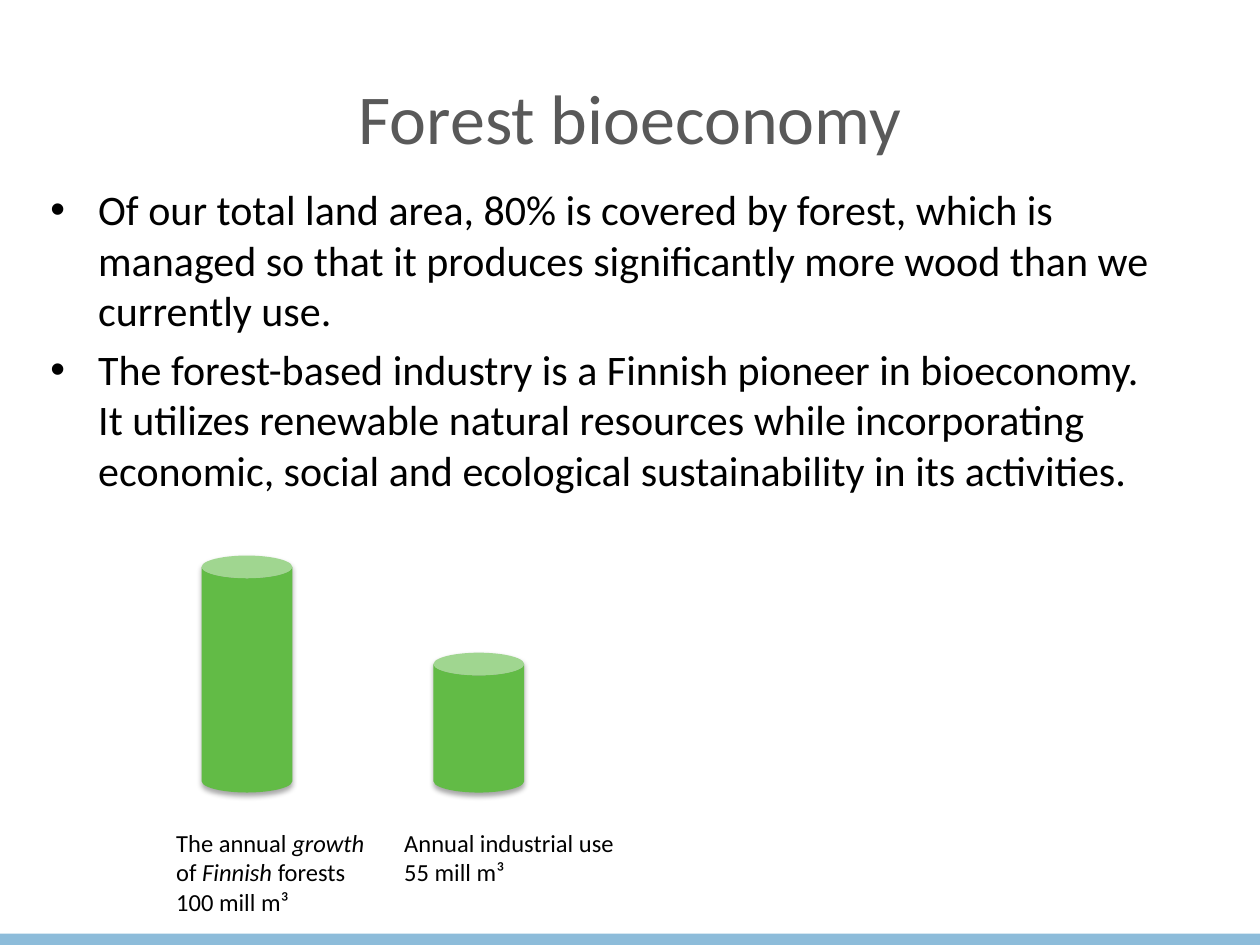
from lxml import etree
from pptx import Presentation
from pptx.dml.color import RGBColor
from pptx.enum.shapes import MSO_SHAPE
from pptx.enum.text import MSO_ANCHOR, PP_ALIGN
from pptx.oxml import parse_xml
from pptx.oxml.ns import nsdecls, qn
from pptx.util import Inches, Pt

RECTANGLE, CAN = MSO_SHAPE.RECTANGLE, MSO_SHAPE.CAN
TOP, MIDDLE = MSO_ANCHOR.TOP, MSO_ANCHOR.MIDDLE
LEFT, CENTER = PP_ALIGN.LEFT, PP_ALIGN.CENTER

THEME = {
    "font": "Calibri",
    "heading": RGBColor.from_string("595959"),
    "text": RGBColor.from_string("000000"),
    "wood": RGBColor.from_string("62BB46"),
    "footer": RGBColor.from_string("8DBCDA"),
    "heading_size": 40,
    "body_size": 24,
    "label_size": 14,
}

deck = Presentation()
deck.slide_width, deck.slide_height = Inches(10), Inches(7.5)
slide = deck.slides.add_slide(deck.slide_layouts[6])
COL, ROW = deck.slide_width / 100, deck.slide_height / 100


def write(paragraphs, left, top, width, height, *, size, color="text", align=LEFT,
          anchor=TOP, inset=0, bullet=None, gap=0):
    box = slide.shapes.add_textbox(
        int(left * COL), int(top * ROW), int(width * COL), int(height * ROW))
    frame = box.text_frame
    frame.word_wrap = True
    frame.vertical_anchor = anchor
    frame.margin_left = frame.margin_right = Inches(inset)
    frame.margin_top = frame.margin_bottom = Inches(inset / 2)
    for index, wording in enumerate(paragraphs):
        paragraph = frame.paragraphs[0] if index == 0 else frame.add_paragraph()
        if bullet:
            properties = paragraph._p.get_or_add_pPr()
            properties.set("marL", str(Inches(0.38)))
            properties.set("indent", str(-Inches(0.38)))
            etree.SubElement(properties, qn("a:buFont")).set("typeface", "Arial")
            etree.SubElement(properties, qn("a:buChar")).set("char", bullet)
        paragraph.alignment = align
        if index and gap:
            paragraph.space_before = Pt(gap)
        for line_number, line in enumerate(wording.split("\n")):
            if line_number:
                paragraph.add_line_break()
            for part, phrase in enumerate(line.split("*")):
                run = paragraph.add_run()
                run.text = phrase
                run.font.name = THEME["font"]
                run.font.size = Pt(THEME[size])
                run.font.color.rgb = THEME[color]
                run.font.italic = part % 2 == 1


def draw(preset, left, top, width, height, color):
    shape = slide.shapes.add_shape(
        preset, int(left * COL), int(top * ROW), int(width * COL), int(height * ROW))
    shape.shadow.inherit = False
    shape.fill.solid()
    shape.fill.fore_color.rgb = THEME[color]
    shape.line.fill.background()
    return shape


draw(RECTANGLE, 0, 98.8, 100, 1.2, "footer")

write(["Forest bioeconomy"], 5, 4, 90, 16.67,
      size="heading_size", color="heading", align=CENTER, anchor=MIDDLE)

write([
    "Of our total land area, 80% is covered by forest, which is managed so that "
    "it produces significantly more wood than we currently use.",
    "The forest-based industry is a Finnish pioneer in bioeconomy.\n"
    "It utilizes renewable natural resources while incorporating economic, social "
    "and ecological sustainability in its activities.",
], 4, 19.47, 90, 43.6, size="body_size", bullet="•", gap=4.8)

BASE, LABEL_TOP, CAN_WIDTH = 83.87, 86.93, 7.2
volumes = [
    (16, 25.07, 13, 17.2, 10.8,
     ["The annual *growth* of *Finnish* forests", "100 mill m³"]),
    (34.4, 14.8, 31.1, 19.5, 7.6,
     ["Annual industrial use", "55 mill m³"]),
]
for can_left, can_height, label_left, label_width, label_height, label in volumes:
    volume = draw(CAN, can_left, BASE - can_height, CAN_WIDTH, can_height, "wood")
    volume._element.spPr.find(qn("a:effectLst")).append(parse_xml(
        f'<a:outerShdw {nsdecls("a")} blurRad="{Pt(3.1)}" dist="{Pt(1.8)}" '
        'dir="5400000" rotWithShape="0"><a:srgbClr val="000000">'
        '<a:alpha val="35000"/></a:srgbClr></a:outerShdw>'))
    write(label, label_left, LABEL_TOP, label_width, label_height,
          size="label_size", inset=0.1)

deck.save("out.pptx")
